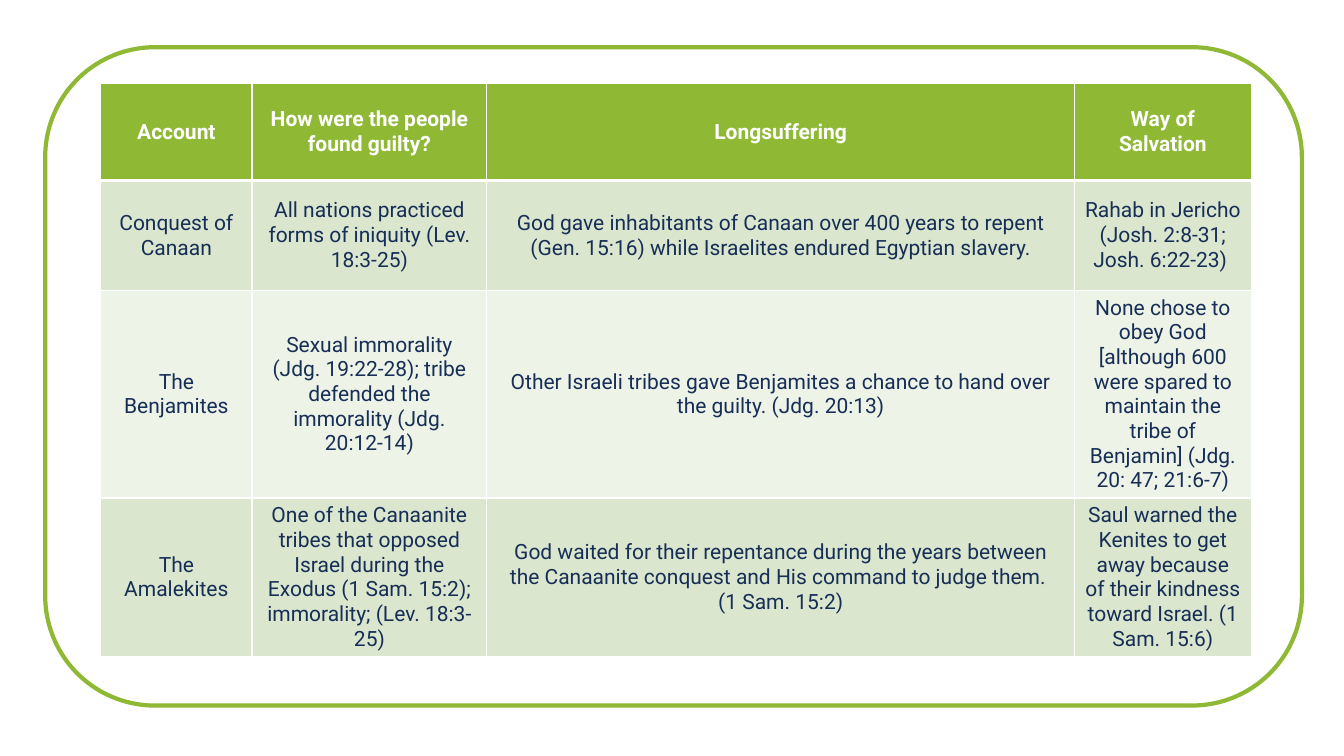
import pptx
import pptx.dml.color
import pptx.enum.shapes
import pptx.enum.text
import pptx.oxml.ns
import pptx.util
import lxml.etree
from pptx.util import Cm

GREEN, NAVY, WHITE = "8FB935", "172E56", "FFFFFF"
BAND_DARK, BAND_LIGHT = "DBE6CE", "EEF3E8"


def color(hex_code):
    return pptx.dml.color.RGBColor.from_string(hex_code)


def write(frame, text, ink=NAVY, bold=False, spacing=0):
    """Fill a text frame; each line of text becomes a centred paragraph."""
    frame.text = text
    for paragraph in frame.paragraphs:
        paragraph.alignment = pptx.enum.text.PP_ALIGN.CENTER
        paragraph.space_before = paragraph.space_after = pptx.util.Pt(spacing)
        for run in paragraph.runs:
            run.font.name = "Roboto"
            run.font.size = pptx.util.Pt(15)
            run.font.bold = bold
            run.font.color.rgb = color(ink)


deck = pptx.Presentation()
deck.slide_width, deck.slide_height = Cm(33.87), Cm(19.05)
slide = deck.slides.add_slide(deck.slide_layouts[6])

# Rounded frame
frame_outline = slide.shapes.add_shape(
    pptx.enum.shapes.MSO_SHAPE.ROUNDED_RECTANGLE,
    Cm(1.14), Cm(1.19), Cm(31.67), Cm(16.59))
frame_outline.shadow.inherit = False
frame_outline.fill.background()
frame_outline.line.color.rgb = color(GREEN)
frame_outline.line.width = pptx.util.Pt(3)

# Table content: the header row, then one row per account
accounts = [
    ("Account", "How were the people found guilty?", "Longsuffering",
     "Way of Salvation"),
    ("Conquest of Canaan",
     "All nations practiced forms of iniquity (Lev. 18:3-25)",
     "God gave inhabitants of Canaan over 400 years to repent (Gen. 15:16) "
     "while Israelites endured Egyptian slavery.",
     "Rahab in Jericho (Josh. 2:8-31; Josh. 6:22-23) "),
    ("The Benjamites",
     "Sexual immorality (Jdg. 19:22-28); tribe defended the immorality "
     "(Jdg. 20:12-14)",
     "Other Israeli tribes gave Benjamites a chance to hand over the guilty. "
     "(Jdg. 20:13)",
     "None chose to obey God [although 600 were spared to maintain the tribe "
     "of Benjamin] (Jdg. 20: 47; 21:6-7)"),
    ("The Amalekites",
     "One of the Canaanite tribes that opposed Israel during the Exodus "
     "(1 Sam. 15:2); immorality; (Lev. 18:3-25)",
     "God waited for their repentance during the years between the Canaanite "
     "conquest and His command to judge them. \n(1 Sam. 15:2)",
     "Saul warned the Kenites to get away because of their kindness toward "
     "Israel. (1 Sam. 15:6)"),
]
column_widths = [3.81, 5.92, 14.81, 4.45]
row_heights = [2.44, 2.77, 5.23, 4]
row_fills = [GREEN, BAND_DARK, BAND_LIGHT, BAND_DARK]
row_spacing = [0, 6, 6, 0]

# Table grid
table = slide.shapes.add_table(
    len(row_heights), len(column_widths), Cm(2.54), Cm(2.11),
    Cm(sum(column_widths)), Cm(sum(row_heights))).table
for column, width in zip(table.columns, column_widths):
    column.width = Cm(width)
for row, height in zip(table.rows, row_heights):
    row.height = Cm(height)

# Cells, with a thicker white rule under the header
for r, account in enumerate(accounts):
    is_header = r == 0
    for c, text in enumerate(account):
        cell = table.cell(r, c)
        write(cell.text_frame, text, ink=WHITE if is_header else NAVY,
              bold=is_header, spacing=row_spacing[r])
        cell.vertical_anchor = pptx.enum.text.MSO_ANCHOR.MIDDLE
        properties = cell._tc.get_or_add_tcPr()
        for side in "LRTB":
            thick = (r, side) in ((0, "B"), (1, "T"))
            border = lxml.etree.SubElement(
                properties, pptx.oxml.ns.qn("a:ln" + side),
                w=str(pptx.util.Pt(3 if thick else 1)))
            border_fill = lxml.etree.SubElement(
                border, pptx.oxml.ns.qn("a:solidFill"))
            lxml.etree.SubElement(
                border_fill, pptx.oxml.ns.qn("a:srgbClr"), val=WHITE)
        cell.fill.solid()
        cell.fill.fore_color.rgb = color(row_fills[r])

deck.save("out.pptx")
